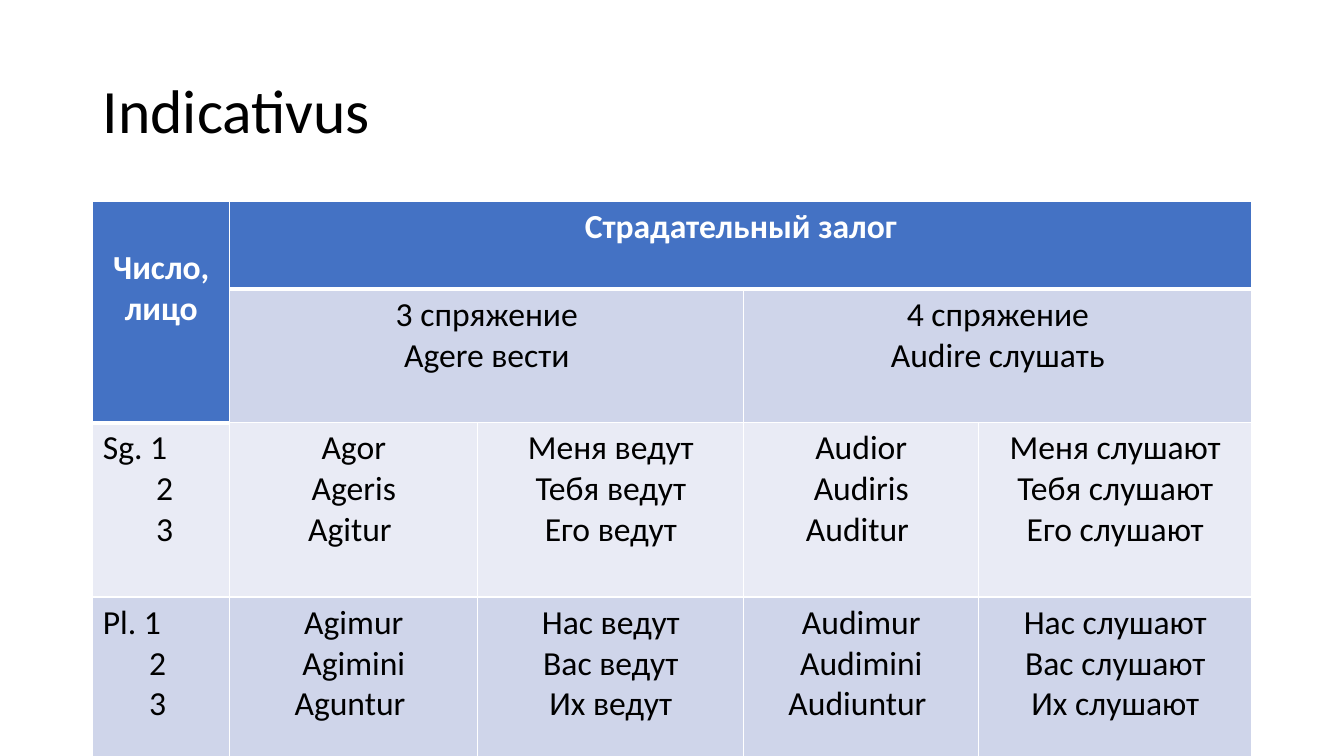
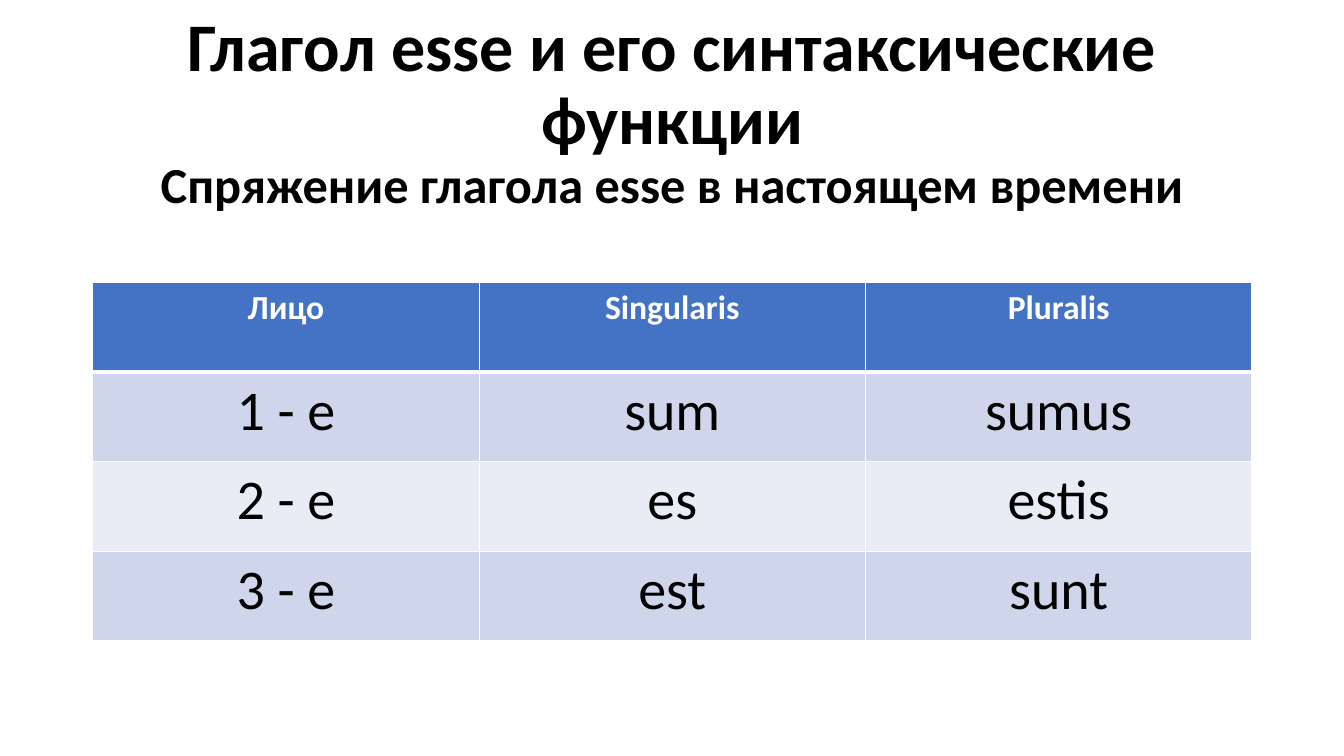
from dataclasses import dataclass

from lxml import etree
from pptx import Presentation
from pptx.dml.color import RGBColor
from pptx.enum.text import MSO_ANCHOR, MSO_AUTO_SIZE, PP_ALIGN
from pptx.oxml.ns import qn
from pptx.slide import Slide
from pptx.table import _Cell
from pptx.util import Emu, Inches, Pt

LEFT, CENTER = PP_ALIGN.LEFT, PP_ALIGN.CENTER
MIDDLE, TOP = MSO_ANCHOR.MIDDLE, MSO_ANCHOR.TOP
NO_FIT = MSO_AUTO_SIZE.NONE
TITLE_ONLY = 5
CONTENT_LEFT, CONTENT_WIDTH = 0.92, 11.5
TITLE_TOP, TITLE_HEIGHT = 0.4, 1.45


@dataclass(frozen=True)
class Theme:
    font: str = "Calibri"
    ink: str = "000000"
    paper: str = "FFFFFF"
    header: str = "4472C4"
    band_dark: str = "CFD5EA"
    band_light: str = "E9EBF5"
    title: float = 44
    title_large: float = 48.6
    subtitle: float = 36
    text: float = 24
    forms: float = 40
    rule: float = 1
    header_rule: float = 3


@dataclass(frozen=True)
class Line:
    text: str
    size: float
    bold: bool = False


@dataclass(frozen=True)
class Span:
    row: int
    col: int
    rows: int = 1
    cols: int = 1


@dataclass(frozen=True)
class Grid:
    top: float
    cols: list[float]
    rows: list[float]
    cells: list[list[str]]
    size: float
    headers: frozenset[tuple[int, int]]
    spans: tuple[Span, ...] = ()
    insets: tuple[tuple[int, int, float], ...] = ()
    indents: tuple[tuple[int, float], ...] = ()


THEME = Theme()

VOICE = Grid(
    top=2,
    cols=[1.36, 2.46, 2.64, 2.33, 2.71],
    rows=[0.87, 1.31, 1.73, 1.59],
    cells=[
        ["Число,\nлицо", "Страдательный залог", "", "", ""],
        ["", "3 спряжение\nAgere вести", "", "4 спряжение\nAudire слушать", ""],
        ["Sg. 1\n2\n3", "Agor\nAgeris\nAgitur ", "Меня ведут\nТебя ведут\nЕго ведут",
         "Audior\nAudiris\nAuditur ", "Меня слушают\nТебя слушают\nЕго слушают"],
        ["Pl. 1\n2\n3", "Agimur\nAgimini\nAguntur ", "Нас ведут\nВас ведут\nИх ведут",
         "Audimur\nAudimini\nAudiuntur ", "Нас слушают\nВас слушают\nИх слушают"],
    ],
    size=THEME.text,
    headers=frozenset([(0, col) for col in range(5)] + [(1, 0)]),
    spans=(Span(0, 0, rows=2), Span(0, 1, cols=4), Span(1, 1, cols=2), Span(1, 3, cols=2)),
    insets=((0, 0, 0.46),),
    indents=((2, 0.53), (3, 0.46)),
)

ESSE = Grid(
    top=2.8,
    cols=[CONTENT_WIDTH / 3] * 3,
    rows=[0.89] * 4,
    cells=[
        ["Лицо", "Singularis", "Pluralis"],
        ["1 - е", "sum", "sumus"],
        ["2 - е", "es", "estis"],
        ["3 - е", "est", "sunt"],
    ],
    size=THEME.forms,
    headers=frozenset((0, col) for col in range(3)),
)


def write(p, text: str, *, size: float, color: str = THEME.ink, bold: bool = False,
          align: PP_ALIGN = LEFT, spacing: float = 1.0) -> None:
    p.alignment = align
    p.line_spacing = spacing
    r = p.add_run()
    r.text = text
    r.font.name = THEME.font
    r.font.size = Pt(size)
    r.font.bold = bold
    r.font.color.rgb = RGBColor.from_string(color)


def add_title(slide: Slide, lines: list[Line], align: PP_ALIGN) -> None:
    sp = slide.shapes.title
    sp.left, sp.top = Inches(CONTENT_LEFT), Inches(TITLE_TOP)
    sp.width, sp.height = Inches(CONTENT_WIDTH), Inches(TITLE_HEIGHT)
    tf = sp.text_frame
    tf.word_wrap = True
    tf.auto_size = NO_FIT
    tf.vertical_anchor = MIDDLE
    p = tf.paragraphs[0]
    for i, line in enumerate(lines):
        if i:
            p.add_line_break()
        write(p, line.text, size=line.size, bold=line.bold, align=align, spacing=0.9)


def set_borders(cell: _Cell, top: float, bottom: float) -> None:
    tc_pr = cell._tc.get_or_add_tcPr()
    widths = {"a:lnL": THEME.rule, "a:lnR": THEME.rule, "a:lnT": top, "a:lnB": bottom}
    for tag, width in widths.items():
        ln = etree.SubElement(tc_pr, qn(tag), w=str(Pt(width)))
        fill = etree.SubElement(ln, qn("a:solidFill"))
        etree.SubElement(fill, qn("a:srgbClr"), val=THEME.paper)


def add_grid(slide: Slide, grid: Grid) -> None:
    frame = slide.shapes.add_table(
        len(grid.rows), len(grid.cols), Inches(CONTENT_LEFT), Inches(grid.top),
        Inches(CONTENT_WIDTH), Inches(sum(grid.rows)))
    table = frame.table
    table.horz_banding = False
    for column, width in zip(table.columns, grid.cols):
        column.width = Inches(width)
    for row, height in zip(table.rows, grid.rows):
        row.height = Inches(height)
    for span in grid.spans:
        last = table.cell(span.row + span.rows - 1, span.col + span.cols - 1)
        table.cell(span.row, span.col).merge(last)

    indents = dict(grid.indents)
    for i, texts in enumerate(grid.cells):
        band = THEME.band_dark if i % 2 else THEME.band_light
        for j, text in enumerate(texts):
            cell = table.cell(i, j)
            is_header = (i, j) in grid.headers
            below_header = (i - 1, j) in grid.headers
            set_borders(cell,
                        THEME.header_rule if below_header else THEME.rule,
                        THEME.header_rule if is_header else THEME.rule)
            cell.fill.solid()
            cell.fill.fore_color.rgb = RGBColor.from_string(THEME.header if is_header else band)
            cell.vertical_anchor = TOP
            if not text:
                continue
            indent = indents.get(i, 0) if j == 0 else 0
            tf = cell.text_frame
            for n, line in enumerate(text.split("\n")):
                p = tf.add_paragraph() if n else tf.paragraphs[0]
                if n and indent:
                    p._p.get_or_add_pPr().set("marL", str(Inches(indent)))
                write(p, line, size=THEME.text if is_header else grid.size,
                      color=THEME.paper if is_header else THEME.ink, bold=is_header,
                      align=LEFT if indent else CENTER)
    for i, j, inset in grid.insets:
        table.cell(i, j).margin_top = Inches(inset)


def main() -> None:
    prs = Presentation()
    prs.slide_width, prs.slide_height = Emu(12192000), Inches(7.5)
    layout = prs.slide_layouts[TITLE_ONLY]
    pages = [
        ([Line("Indicativus", THEME.title)], LEFT, VOICE),
        ([Line("Глагол esse и его синтаксические функции", THEME.title_large, True),
          Line("Спряжение глагола esse в настоящем времени", THEME.subtitle, True)],
         CENTER, ESSE),
    ]
    for lines, align, grid in pages:
        slide = prs.slides.add_slide(layout)
        add_title(slide, lines, align)
        add_grid(slide, grid)
    prs.save("out.pptx")


if __name__ == "__main__":
    main()
